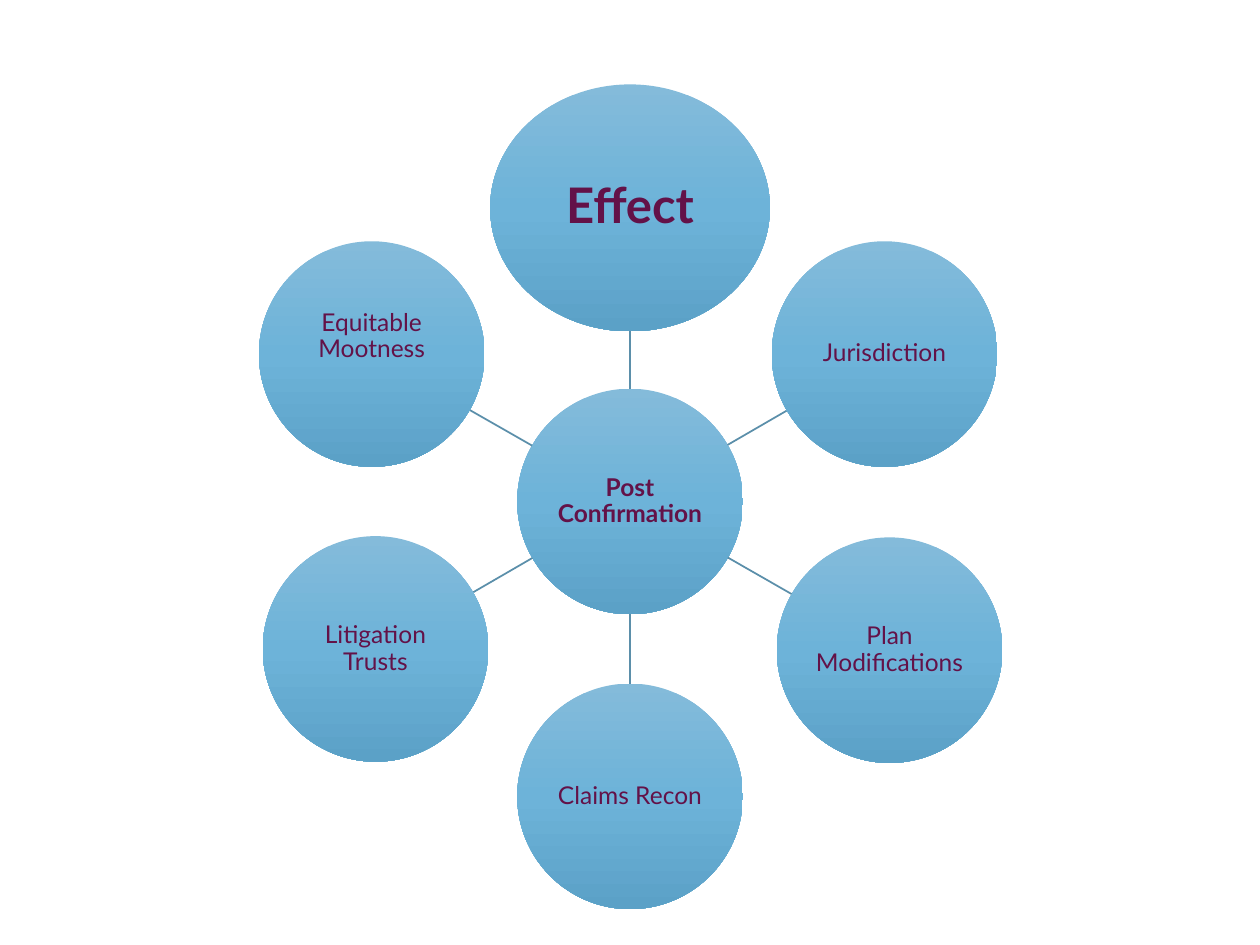
from copy import deepcopy
from math import hypot

from pptx import Presentation
from pptx import util as u
from pptx.dml.color import RGBColor
from pptx.enum import shapes, text
from pptx.oxml.ns import qn
from pptx.oxml.xmlchemy import OxmlElement

WIDTH, HEIGHT = 10, 7.5
CIRCLE = (1.79, 1.79)
HUB = (WIDTH / 2, 3.98)
GRADIENT = [(0, "84BBDA"), (0.5, "6DB3D9"), (1, "5BA1C7")]
TEXT_COLOR, LINE_COLOR = "631248", "5B8FAA"

# Label, centre, extent and text format of each circle round the hub
SPOKES = [
    ("Effect", (5, 1.65), (2.22, 1.96), {"size": 28, "bold": True}),
    ("Jurisdiction", (7.02, 2.81), CIRCLE, {}),
    ("Plan Modifications", (7.06, 5.16), CIRCLE, {}),
    ("Claims Recon", (5, 6.32), CIRCLE, {}),
    ("Litigation Trusts", (2.98, 5.15), CIRCLE, {}),
    ("Equitable Mootness", (2.95, 2.81), CIRCLE, {"bottom": 0.29}),
]


def color(value):
    return RGBColor.from_string(value)


def write(shape, words, size=14, bold=False, bottom=0.01):
    """Centre the words in a shape."""
    frame = shape.text_frame
    frame.word_wrap = True
    frame.vertical_anchor = text.MSO_ANCHOR.MIDDLE
    frame.margin_left = frame.margin_right = frame.margin_top = u.Inches(0.01)
    frame.margin_bottom = u.Inches(bottom)
    para = frame.paragraphs[0]
    para.alignment = text.PP_ALIGN.CENTER
    para.line_spacing = 0.9
    span = para.add_run()
    span.text = words
    span.font.name = "Lato"
    span.font.size = u.Pt(size)
    span.font.bold = bold
    span.font.color.rgb = color(TEXT_COLOR)


def fill_gradient(shape):
    """Fill a shape from top to bottom with three stops."""
    shape.fill.gradient()
    shape.fill.gradient_angle = 270
    first = next(shape._element.spPr.iter(qn("a:gs")))
    first.addnext(deepcopy(first))
    for stop, (position, value) in zip(shape.fill.gradient_stops, GRADIENT):
        stop.position = position
        stop.color.rgb = color(value)


def add_circle(page, words, centre, extent, **style):
    left, top = (c - e / 2 for c, e in zip(centre, extent))
    circle = page.shapes.add_shape(
        shapes.MSO_SHAPE.OVAL, *map(u.Inches, (left, top, *extent)))
    circle.shadow.inherit = False
    fill_gradient(circle)
    circle.line.fill.background()
    write(circle, words, **style)


def edge_point(centre, extent, target):
    """Where the line from an ellipse's centre to the target leaves it."""
    dx, dy = (t - c for t, c in zip(target, centre))
    reach = 1 / hypot(dx / (extent[0] / 2), dy / (extent[1] / 2))
    return centre[0] + dx * reach, centre[1] + dy * reach


def add_spoke(page, centre, extent):
    start = edge_point(HUB, CIRCLE, centre)
    end = edge_point(centre, extent, HUB)
    line = page.shapes.add_connector(
        shapes.MSO_CONNECTOR.STRAIGHT, *map(u.Inches, (*start, *end)))
    line.line.color.rgb = color(LINE_COLOR)
    line.line.width = u.Pt(1)
    line._element.spPr.append(OxmlElement("a:effectLst"))


def main():
    deck = Presentation()
    deck.slide_width, deck.slide_height = u.Inches(WIDTH), u.Inches(HEIGHT)
    page = deck.slides.add_slide(deck.slide_layouts[6])

    # Hub, then each spoke with its circle
    add_circle(page, "Post Confirmation", HUB, CIRCLE, bold=True)
    for words, centre, extent, style in SPOKES:
        add_spoke(page, centre, extent)
        add_circle(page, words, centre, extent, **style)

    deck.save("out.pptx")


if __name__ == "__main__":
    main()
